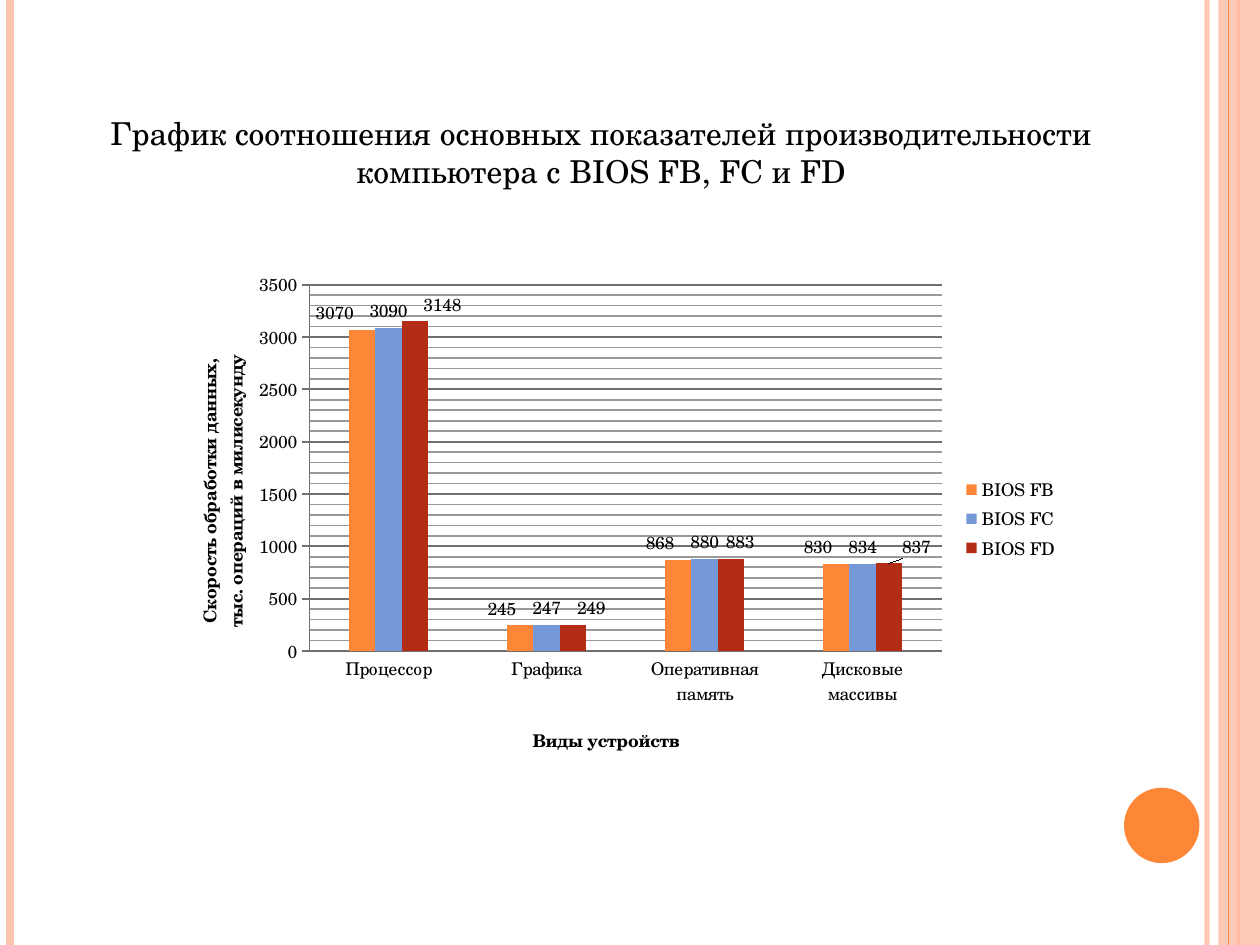
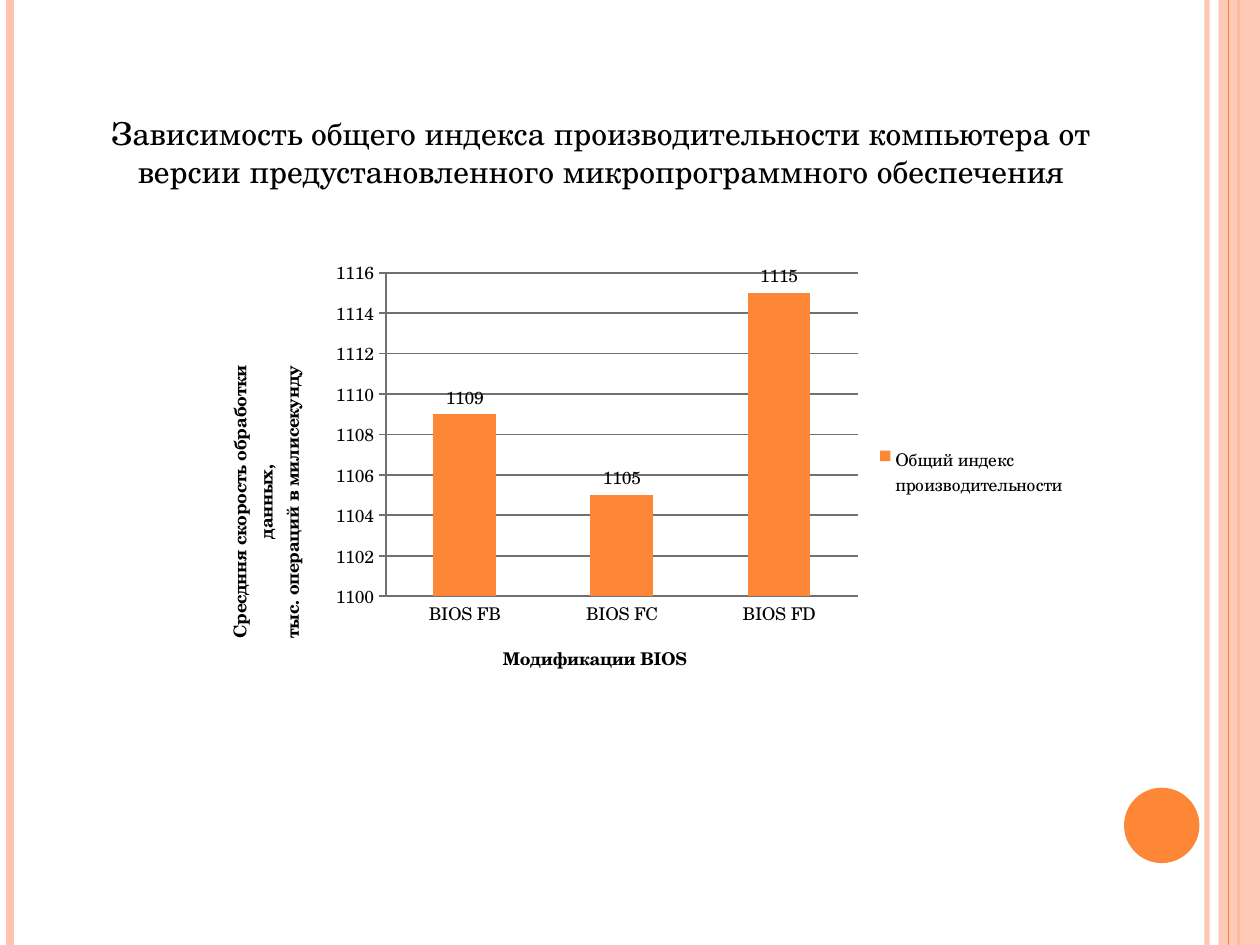
from lxml import etree
from pptx import Presentation
from pptx.chart.data import CategoryChartData
from pptx.dml.color import RGBColor
from pptx.enum.chart import XL_CHART_TYPE, XL_LABEL_POSITION, XL_LEGEND_POSITION, XL_TICK_MARK
from pptx.enum.shapes import MSO_CONNECTOR, MSO_SHAPE
from pptx.enum.text import MSO_ANCHOR, MSO_AUTO_SIZE, PP_ALIGN
from pptx.oxml.ns import qn
from pptx.util import Cm, Pt

COLUMNS = XL_CHART_TYPE.COLUMN_CLUSTERED
ABOVE_BAR = XL_LABEL_POSITION.OUTSIDE_END
LEGEND_RIGHT = XL_LEGEND_POSITION.RIGHT
TICK_NONE, TICK_OUTSIDE = XL_TICK_MARK.NONE, XL_TICK_MARK.OUTSIDE
STRAIGHT = MSO_CONNECTOR.STRAIGHT
RECTANGLE, OVAL = MSO_SHAPE.RECTANGLE, MSO_SHAPE.OVAL
CENTER, TOP, NO_AUTOFIT = PP_ALIGN.CENTER, MSO_ANCHOR.TOP, MSO_AUTO_SIZE.NONE

FONT = "TeX Gyre Schola"
COLORS = {
    "text": "000000", "orange": "FE8637", "peach": "FEC3AE", "blue": "7598D9",
    "red": "B32C16", "axis": "707070", "minor": "999999",
}
SERIES_COLORS = ("orange", "blue", "red")
WIDTH, HEIGHT = 25.4, 19.05


def color(name):
    return RGBColor.from_string(COLORS[name])


def set_alpha(shape, percent):
    for fill_color in shape._element.spPr.iter(qn("a:srgbClr")):
        etree.SubElement(fill_color, qn("a:alpha"), val=str(percent * 1000))


def set_layout(parent, after=None, inner=False, edge=True, **fractions):
    """Place a chart part by fractions of the chart's size; without edge they are offsets."""
    for previous in parent.findall(qn("c:layout")):
        parent.remove(previous)
    layout = etree.Element(qn("c:layout"))
    manual = etree.SubElement(layout, qn("c:manualLayout"))
    if inner:
        etree.SubElement(manual, qn("c:layoutTarget"), val="inner")
    if edge:
        for mode in ("xMode", "yMode"):
            etree.SubElement(manual, qn(f"c:{mode}"), val="edge")
    for key, value in fractions.items():
        etree.SubElement(manual, qn(f"c:{key}"), val=str(value))
    position = 0 if after is None else parent.index(parent.find(qn(after))) + 1
    parent.insert(position, layout)


class Deck:
    def __init__(self):
        self.presentation = Presentation()
        self.presentation.slide_width = Cm(WIDTH)
        self.presentation.slide_height = Cm(HEIGHT)
        self.slide = None

    def add_slide(self, title):
        self.slide = self.presentation.slides.add_slide(self.presentation.slide_layouts[5])
        self.add_decoration()
        self.set_title(title)

    def style_font(self, font, size, bold=False):
        font.name, font.size, font.bold = FONT, Pt(size), bold
        font.color.rgb = color("text")

    def add_vertical_line(self, left, color_name, width, alpha=100):
        line = self.slide.shapes.add_connector(
            STRAIGHT, Cm(left), Cm(0), Cm(left), Cm(HEIGHT))
        line.line.color.rgb = color(color_name)
        line.line.width = Pt(width)
        if alpha < 100:
            set_alpha(line, alpha)
        etree.SubElement(line._element.spPr, qn("a:effectLst"))

    def add_filled_shape(self, kind, left, top, width, height, color_name, alpha=100):
        shape = self.slide.shapes.add_shape(kind, Cm(left), Cm(top), Cm(width), Cm(height))
        shape.shadow.inherit = False
        shape.fill.solid()
        shape.fill.fore_color.rgb = color(color_name)
        shape.line.fill.background()
        if alpha < 100:
            set_alpha(shape, alpha)

    def add_decoration(self):
        self.add_vertical_line(24.33, "peach", 3, alpha=93)
        self.add_vertical_line(0.2, "peach", 4.5)
        self.add_vertical_line(24.97, "orange", 1.5)
        self.add_filled_shape(RECTANGLE, 24.56, 0, 0.84, HEIGHT, "peach", alpha=87)
        self.add_vertical_line(24.77, "orange", 0.75)
        self.add_filled_shape(OVAL, 22.66, 15.88, 1.52, 1.52, "orange")

    def set_title(self, text):
        title = self.slide.shapes.title
        title.left, title.top, title.width, title.height = Cm(1.4), Cm(2.18), Cm(21.44), Cm(1.8)
        frame = title.text_frame
        frame.word_wrap, frame.auto_size = True, NO_AUTOFIT
        frame.vertical_anchor = TOP
        paragraph = frame.paragraphs[0]
        paragraph.alignment = CENTER
        run = paragraph.add_run()
        run.text = text
        self.style_font(run.font, 18)

    def add_chart(self, box, categories, series, gap):
        data = CategoryChartData()
        data.categories = categories
        for name, values in series.items():
            data.add_series(name, values)
        chart = self.slide.shapes.add_chart(COLUMNS, *map(Cm, box), data).chart
        self.style_font(chart.font, 10)
        chart.has_title = False
        plot = chart.plots[0]
        plot.vary_by_categories = False
        plot.gap_width, plot.overlap = gap, 0
        for one_series, color_name in zip(plot.series, SERIES_COLORS):
            one_series.format.fill.solid()
            one_series.format.fill.fore_color.rgb = color(color_name)
            labels = one_series.data_labels
            labels.show_value, labels.position = True, ABOVE_BAR
            self.style_font(labels.font, 10)
        return chart

    def shift_labels(self, series, offsets):
        for index in range(len(offsets)):
            label = series.points[index].data_label
            self.style_font(label.font, 10)
            label.position = ABOVE_BAR
        for element, offset in zip(series._element.iter(qn("c:dLbl")), offsets):
            set_layout(element, "c:idx", edge=False, x=offset, y=0)

    def style_axis(self, axis, tick, title_lines, place, rotation=0):
        axis.major_tick_mark, axis.minor_tick_mark = tick, TICK_NONE
        axis.format.line.color.rgb = color("axis")
        axis.format.line.width = Pt(1)
        frame = axis.axis_title.text_frame
        for index, line in enumerate(title_lines):
            paragraph = frame.add_paragraph() if index else frame.paragraphs[0]
            paragraph.alignment = CENTER
            run = paragraph.add_run()
            run.text = line
            self.style_font(run.font, 10, bold=True)
        frame._txBody.bodyPr.set("rot", str(rotation * 60000))
        frame._txBody.bodyPr.set("vert", "horz")
        set_layout(axis.axis_title._element, "c:tx", x=place[0], y=place[1])

    def style_value_scale(self, axis, low, high, major):
        axis.minimum_scale, axis.maximum_scale, axis.major_unit = low, high, major
        axis.has_major_gridlines = True
        axis.major_gridlines.format.line.color.rgb = color("axis")
        axis.major_gridlines.format.line.width = Pt(1)

    def add_minor_gridlines(self, axis, unit):
        axis.minor_unit, axis.has_minor_gridlines = unit, True
        grid = axis._element.find(qn("c:minorGridlines"))
        properties = etree.SubElement(grid, qn("c:spPr"))
        line = etree.SubElement(properties, qn("a:ln"), w=str(Pt(1)))
        fill = etree.SubElement(line, qn("a:solidFill"))
        etree.SubElement(fill, qn("a:srgbClr"), val=COLORS["minor"])

    def arrange_chart(self, chart, plot_area, legend):
        chart.has_legend = True
        chart.legend.position = LEGEND_RIGHT
        chart.legend.include_in_layout = False
        self.style_font(chart.legend.font, 10)
        parts = ("x", "y", "w", "h")
        set_layout(chart._chartSpace.find(".//" + qn("c:plotArea")), inner=True,
                   **dict(zip(parts, plot_area)))
        set_layout(chart.legend._element, "c:legendPos", **dict(zip(parts, legend)))


def add_device_slide(deck):
    deck.add_slide("График соотношения основных показателей производительности "
                   "компьютера с BIOS FB, FC и FD")
    chart = deck.add_chart(
        (3.1, 5.33, 18.47, 10.26),
        ("Процессор", "Графика", "Оперативная память", "Дисковые массивы"),
        {"BIOS FB": (3070, 245, 868, 830),
         "BIOS FC": (3090, 247, 880, 834),
         "BIOS FD": (3148, 249, 883, 837)},
        gap=300)
    first, _, last = chart.plots[0].series
    deck.shift_labels(first, (-0.03, -0.02, -0.02, -0.02))
    deck.shift_labels(last, (0.03, 0.02, 0.01, 0.03))
    deck.style_axis(chart.category_axis, TICK_NONE, ["Виды устройств"], (0.41, 0.9))
    deck.style_axis(chart.value_axis, TICK_OUTSIDE,
                    ["Скорость обработки данных,", "тыс. операций в милисекунду"],
                    (0.04, 0.17), rotation=-90)
    deck.style_value_scale(chart.value_axis, 0, 3500, 500)
    deck.add_minor_gridlines(chart.value_axis, 100)
    deck.arrange_chart(chart, (0.17, 0.04, 0.69, 0.72), (0.88, 0.41, 0.11, 0.18))


def add_index_slide(deck):
    deck.add_slide("Зависимость общего индекса производительности компьютера от "
                   "версии предустановленного микропрограммного обеспечения")
    chart = deck.add_chart(
        (4.09, 5.05, 17.6, 8.94),
        ("BIOS FB", "BIOS FC", "BIOS FD"),
        {"Общий индекс производительности": (1109, 1105, 1115)},
        gap=150)
    deck.style_axis(chart.category_axis, TICK_NONE, ["Модификации BIOS"], (0.34, 0.88))
    deck.style_axis(chart.value_axis, TICK_OUTSIDE,
                    ["Сресдння скорость обработки данных,", "тыс. операций в милисекунду"],
                    (0.02, 0.25), rotation=-90)
    deck.style_value_scale(chart.value_axis, 1100, 1116, 2)
    deck.arrange_chart(chart, (0.21, 0.05, 0.54, 0.73), (0.77, 0.43, 0.22, 0.14))


def main():
    deck = Deck()
    add_device_slide(deck)
    add_index_slide(deck)
    deck.presentation.save("out.pptx")


if __name__ == "__main__":
    main()
